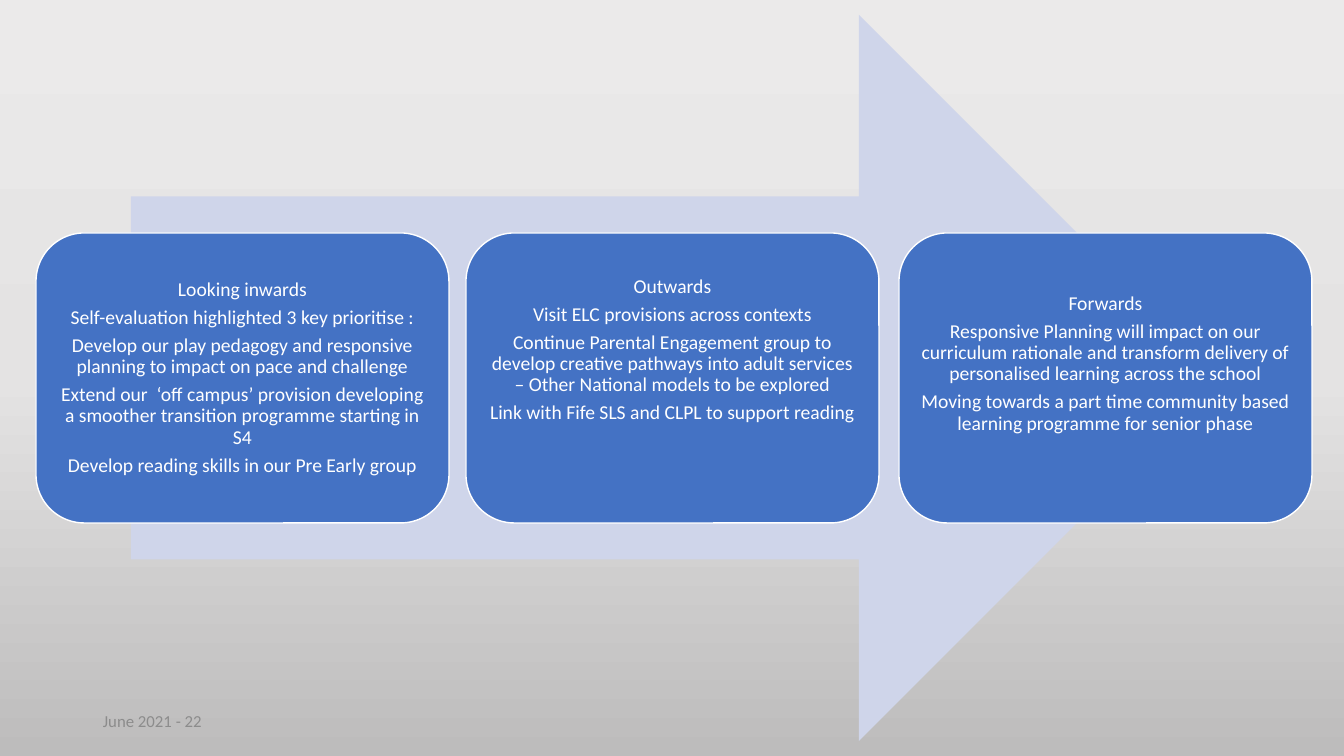
from copy import deepcopy

from pptx import Presentation
from pptx.dml.color import RGBColor
from pptx.enum.shapes import MSO_SHAPE
from pptx.enum.text import MSO_ANCHOR, PP_ALIGN
from pptx.oxml.ns import qn
from pptx.util import Emu, Pt

ARROW = MSO_SHAPE.RIGHT_ARROW
ROUNDED = MSO_SHAPE.ROUNDED_RECTANGLE
MIDDLE = MSO_ANCHOR.MIDDLE
CENTER = PP_ALIGN.CENTER

BLUE = RGBColor(0x44, 0x72, 0xC4)
PALE_BLUE = RGBColor(0xCF, 0xD5, 0xEA)
WHITE = RGBColor(0xFF, 0xFF, 0xFF)
GREY = RGBColor(0x8C, 0x8C, 0x8C)
BACKDROP = [
    (0, RGBColor(0xEB, 0xEA, 0xEA)),
    (0.5, RGBColor(0xE4, 0xE3, 0xE3)),
    (1, RGBColor(0xBD, 0xBC, 0xBC)),
]


def px(n):
    return Emu(round(n * 914400 / 100.8))


def style(paragraph, size, color):
    for run in paragraph.runs:
        run.font.name = "Calibri"
        run.font.size = Pt(size)
        run.font.color.rgb = color


prs = Presentation()
prs.slide_width, prs.slide_height = px(1344), px(756)
slide = prs.slides.add_slide(prs.slide_layouts[6])

backdrop = slide.background.fill
backdrop.gradient()
backdrop.gradient_angle = 270
stop_list = slide.element.find(".//" + qn("a:gsLst"))
stop_list.append(deepcopy(stop_list[0]))
for stop, (position, color) in zip(backdrop.gradient_stops, BACKDROP):
    stop.position = position
    stop.color.rgb = color

date = slide.shapes.add_textbox(px(93), px(701), px(302), px(40)).text_frame
date.word_wrap = True
date.vertical_anchor = MIDDLE
date.text = "June 2021 - 22"
style(date.paragraphs[0], 12, GREY)

arrow = slide.shapes.add_shape(ARROW, px(131), px(15), px(1091), px(726))
arrow.shadow.inherit = False
arrow.fill.solid()
arrow.fill.fore_color.rgb = PALE_BLUE
arrow.line.fill.background()

directions = [
    (36, 6, [
        "Looking inwards",
        "Self-evaluation highlighted 3 key prioritise :",
        "Develop our play pedagogy and responsive planning to impact on pace and challenge",
        "Extend our  ‘off campus’ provision developing a smoother transition programme starting in S4",
        "Develop reading skills in our Pre Early group",
    ]),
    (466, 62, [
        "Outwards",
        "Visit ELC provisions across contexts",
        "Continue Parental Engagement group to develop creative pathways into adult services – Other National models to be explored",
        "Link with Fife SLS and CLPL to support reading",
    ]),
    (899, 34, [
        "Forwards",
        "Responsive Planning will impact on our curriculum rationale and transform delivery of personalised learning across the school",
        "Moving towards a part time community based learning programme for senior phase",
    ]),
]

for left, bottom_margin, lines in directions:
    card = slide.shapes.add_shape(ROUNDED, px(left), px(233), px(413), px(290))
    card.shadow.inherit = False
    card.fill.solid()
    card.fill.fore_color.rgb = BLUE
    card.line.color.rgb = WHITE
    card.line.width = Pt(1)
    body = card.text_frame
    body.word_wrap = True
    body.vertical_anchor = MIDDLE
    body.margin_left = body.margin_right = body.margin_top = px(6)
    body.margin_bottom = px(bottom_margin)
    body.text = "\n".join(lines)
    for paragraph in body.paragraphs:
        paragraph.alignment = CENTER
        paragraph.line_spacing = 0.9
        paragraph.space_after = Pt(4.9)
        style(paragraph, 14, WHITE)

prs.save("out.pptx")
